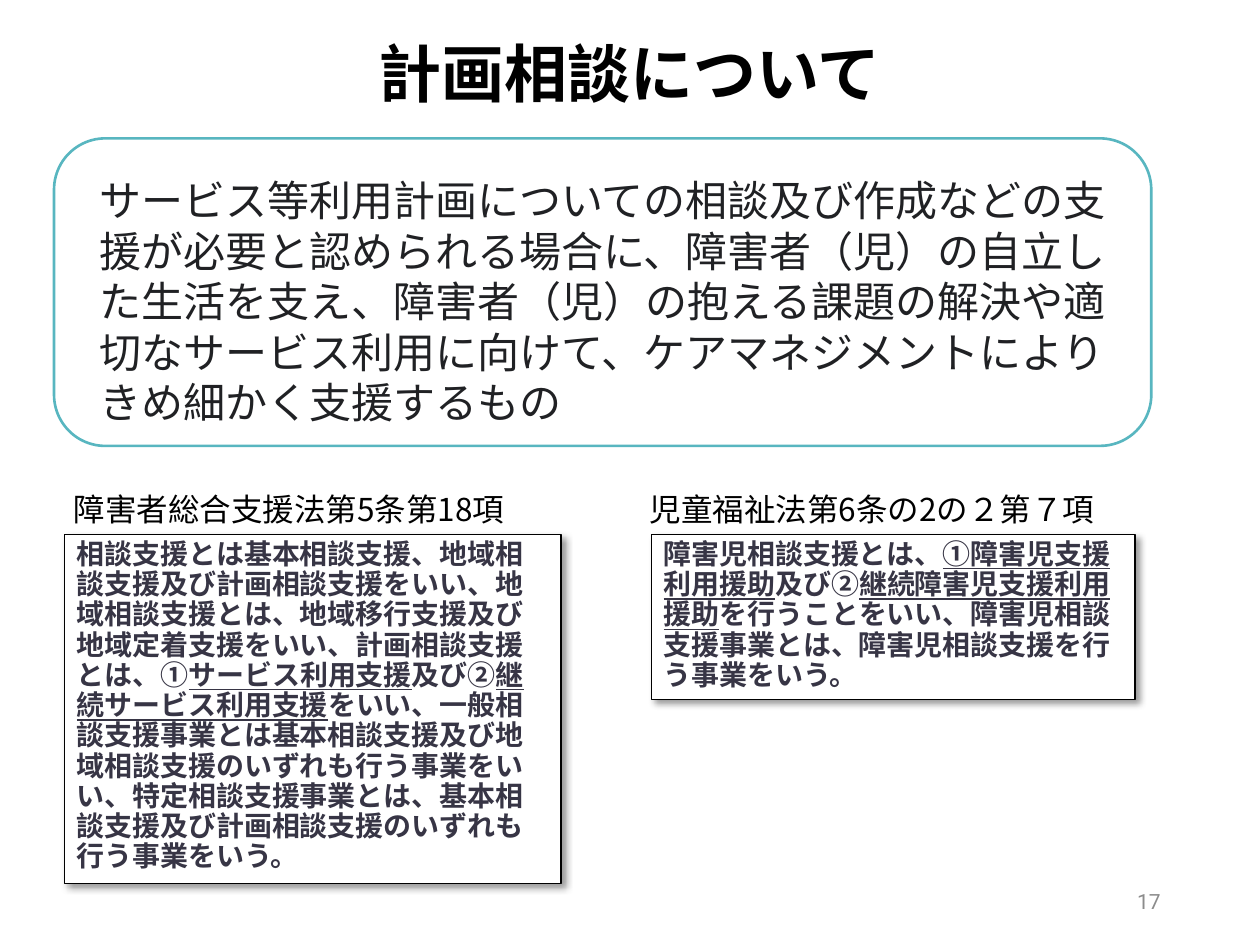
from lxml import etree
from pptx import Presentation
from pptx import util as u
from pptx.dml import color
from pptx.enum import shapes, text
from pptx.oxml import ns

JAPANESE = "Noto Sans CJK JP"


def rgb(value):
    return color.RGBColor.from_string(value)


def write(shape, spans, size, hue, bold=None, align=text.PP_ALIGN.LEFT,
          anchor=text.MSO_ANCHOR.TOP):
    """Fill a shape with one paragraph of (wording, font, underlined) spans."""
    frame = shape.text_frame
    frame.word_wrap = True
    frame.vertical_anchor = anchor
    para = frame.paragraphs[0]
    para.alignment = align
    for wording, font, underlined in spans:
        span = para.add_run()
        span.text = wording
        span.font.size = u.Pt(size)
        span.font.bold = bold
        span.font.underline = underlined
        span.font.color.rgb = rgb(hue)
        span.font.name = font
    return para


deck = Presentation()
deck.slide_width, deck.slide_height = u.Cm(25.4), u.Cm(19.05)
page = deck.slides.add_slide(deck.slide_layouts[6])

# Title and page number
title = page.shapes.add_textbox(u.Cm(1.75), u.Cm(-0.28), u.Cm(21.9), u.Cm(3.68))
para = write(title, [("計画相談について", "Roboto", None)], 36, "000000", True,
             text.PP_ALIGN.CENTER, text.MSO_ANCHOR.MIDDLE)
para.line_spacing = 0.9
number = page.shapes.add_textbox(u.Cm(17.93), u.Cm(17.65), u.Cm(5.72), u.Cm(1.02))
write(number, [("17", "Roboto", None)], 12, "8C8C8C", None,
      text.PP_ALIGN.RIGHT, text.MSO_ANCHOR.MIDDLE)

# Summary in a rounded frame
outline = page.shapes.add_shape(shapes.MSO_SHAPE.ROUNDED_RECTANGLE,
                                u.Cm(1.09), u.Cm(2.79), u.Cm(22.12), u.Cm(6.2))
outline.shadow.inherit = False
outline.fill.background()
outline.line.color.rgb = rgb("58B6C0")
outline.line.width = u.Pt(1.5)
summary = page.shapes.add_textbox(u.Cm(1.75), u.Cm(3.4), u.Cm(20.8), u.Cm(5.38))
write(summary, [(
    "サービス等利用計画についての相談及び作成などの支援が必要と認められる場合に、"
    "障害者（児）の自立した生活を支え、障害者（児）の抱える課題の解決や適切な"
    "サービス利用に向けて、ケアマネジメントによりきめ細かく支援するもの",
    "Arial", None)], 24, "202124")

# Laws: heading left, heading spans, box left, width, height, box wording
laws = [
    (1.24, [("障害者総合支援法第5条第18項", JAPANESE, None)], 1.3, 10.01, 7.04, [
        ("相談支援とは基本相談支援、地域相談支援及び計画相談支援をいい、"
         "地域相談支援とは、地域移行支援及び地域定着支援をいい、計画相談支援とは、①", False),
        ("サービス利用支援", True),
        ("及び②", False),
        ("継続サービス利用支援", True),
        ("をいい、一般相談支援事業とは基本相談支援及び地域相談支援のいずれも行う事業をいい、"
         "特定相談支援事業とは、基本相談支援及び計画相談支援のいずれも行う事業をいう。", False),
    ]),
    (12.85, [("児童福祉法第6条の2", JAPANESE, None), ("の２第７項", "Karla", None)],
     13.13, 9.75, 3.33, [
        ("障害児相談支援とは、", False),
        ("①障害児支援利用援助", True),
        ("及び②", False),
        ("継続障害児支援利用援助", True),
        ("を行うことをいい、障害児相談支援事業とは、障害児相談支援を行う事業をいう。", False),
    ]),
]
for heading_left, heading, left, width, height, wording in laws:
    label = page.shapes.add_textbox(u.Cm(heading_left), u.Cm(9.75), u.Cm(10.8), u.Cm(1.02))
    write(label, heading, 18, "000000")

    box = page.shapes.add_shape(shapes.MSO_SHAPE.RECTANGLE,
                                u.Cm(left), u.Cm(10.77), u.Cm(width), u.Cm(height))
    box.fill.solid()
    box.fill.fore_color.rgb = rgb("FFFFFF")
    box.line.color.rgb = rgb("000000")
    box.line.width = u.Pt(0.75)
    box.shadow.inherit = False
    effects = box.element.spPr.find(ns.qn("a:effectLst"))
    shadow = etree.SubElement(effects, ns.qn("a:outerShdw"), blurRad=str(u.Pt(4)),
                              dist=str(u.Pt(3)), dir="2700000", algn="tl", rotWithShape="0")
    tint = etree.SubElement(shadow, ns.qn("a:srgbClr"), val="000000")
    etree.SubElement(tint, ns.qn("a:alpha"), val="40000")
    para = write(box, [(part, JAPANESE, underlined) for part, underlined in wording],
                 16, "373545", True)
    para.line_spacing = 0.9
    para.space_after = u.Pt(20)

deck.save("out.pptx")
